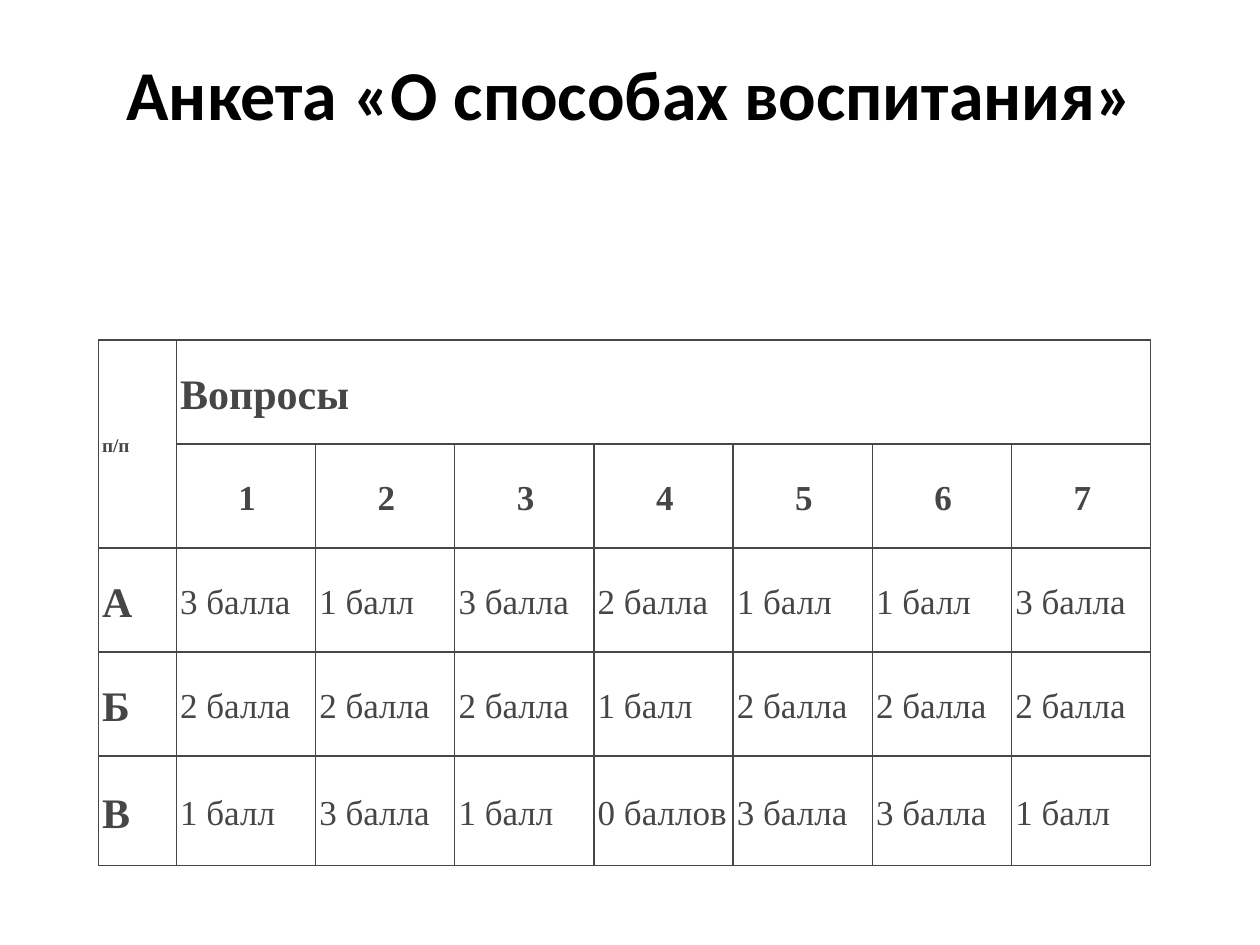
from dataclasses import dataclass

from lxml.etree import SubElement
from pptx import Presentation
from pptx.dml.color import RGBColor
from pptx.enum.text import MSO_ANCHOR, PP_ALIGN
from pptx.oxml.ns import qn
from pptx.util import Pt

PX = 4572


@dataclass(frozen=True)
class Theme:
    black: str = "000000"
    gray: str = "464646"
    sans: str = "Calibri"
    serif: str = "Times New Roman"
    title: int = 40
    head: int = 24
    body: int = 20
    note: int = 11


THEME = Theme()
ROWS = [
    ("А", "3 балла", "1 балл", "3 балла", "2 балла", "1 балл", "1 балл", "3 балла"),
    ("Б", "2 балла", "2 балла", "2 балла", "1 балл", "2 балла", "2 балла", "2 балла"),
    ("В", "1 балл", "3 балла", "1 балл", "0 баллов", "3 балла", "3 балла", "1 балл"),
]


def write(frame, text, size, font=THEME.serif, color=THEME.gray, bold=True,
          align=PP_ALIGN.LEFT, lead=1.15, indent=0):
    para = frame.paragraphs[0]
    para.alignment = align
    para.line_spacing = lead
    para.space_before = Pt(0)
    para._p.get_or_add_pPr().set("marL", str(indent * PX))
    run = para.add_run()
    run.text = text
    run.font.name = font
    run.font.size = Pt(size)
    run.font.bold = bold
    run.font.color.rgb = RGBColor.from_string(color)


def frame_cell(cell):
    props = cell._tc.get_or_add_tcPr()
    for side in ("L", "R", "T", "B"):
        line = SubElement(props, qn(f"a:ln{side}"), w=str(Pt(1)))
        fill = SubElement(line, qn("a:solidFill"))
        SubElement(fill, qn("a:srgbClr"), val=THEME.gray)
    cell.fill.background()
    cell.vertical_anchor = MSO_ANCHOR.MIDDLE
    cell.margin_left = cell.margin_right = 2 * PX
    cell.margin_top = cell.margin_bottom = 2 * PX


def add_title(slide, left, top, width, height):
    title = slide.shapes.title
    title.left, title.top = left * PX, top * PX
    title.width, title.height = width * PX, height * PX
    title.text_frame.vertical_anchor = MSO_ANCHOR.MIDDLE
    write(title.text_frame, "Анкета «О способах воспитания»", THEME.title,
          font=THEME.sans, color=THEME.black, align=PP_ALIGN.CENTER, lead=1.0)


def add_scores(slide, left, top, width, height):
    count = len(ROWS[0])
    lines = len(ROWS) + 2
    shape = slide.shapes.add_table(lines, count, left * PX, top * PX,
                                   width * PX, height * PX)
    table = shape.table
    table.first_row = table.horz_banding = False
    first, last = 124, 174
    step = (width - first) // (count - 1)
    pitch = (height - last) // (lines - 1)
    for num, col in enumerate(table.columns):
        col.width = (step if num else first) * PX
    for num, row in enumerate(table.rows):
        row.height = (pitch if num < lines - 1 else last) * PX
    for cell in table.iter_cells():
        frame_cell(cell)
    table.cell(0, 0).merge(table.cell(1, 0))
    table.cell(0, 1).merge(table.cell(0, count - 1))

    def put(row, col, text, size, **style):
        write(table.cell(row, col).text_frame, text, size, indent=4, **style)

    put(0, 0, "п/п", THEME.note)
    put(0, 1, "Вопросы", THEME.head)
    for col in range(1, count):
        put(1, col, str(col), THEME.body, align=PP_ALIGN.CENTER)
    for row, (name, *marks) in enumerate(ROWS, 2):
        put(row, 0, name, THEME.head)
        for col, mark in enumerate(marks, 1):
            put(row, col, mark, THEME.body, bold=False)


def main():
    deck = Presentation()
    deck.slide_width, deck.slide_height = 2000 * PX, 1500 * PX
    slide = deck.slides.add_slide(deck.slide_layouts[5])
    add_title(slide, 100, 60, 1800, 174)
    add_scores(slide, 156, 540, 1671, 834)
    deck.save("out.pptx")


if __name__ == "__main__":
    main()
